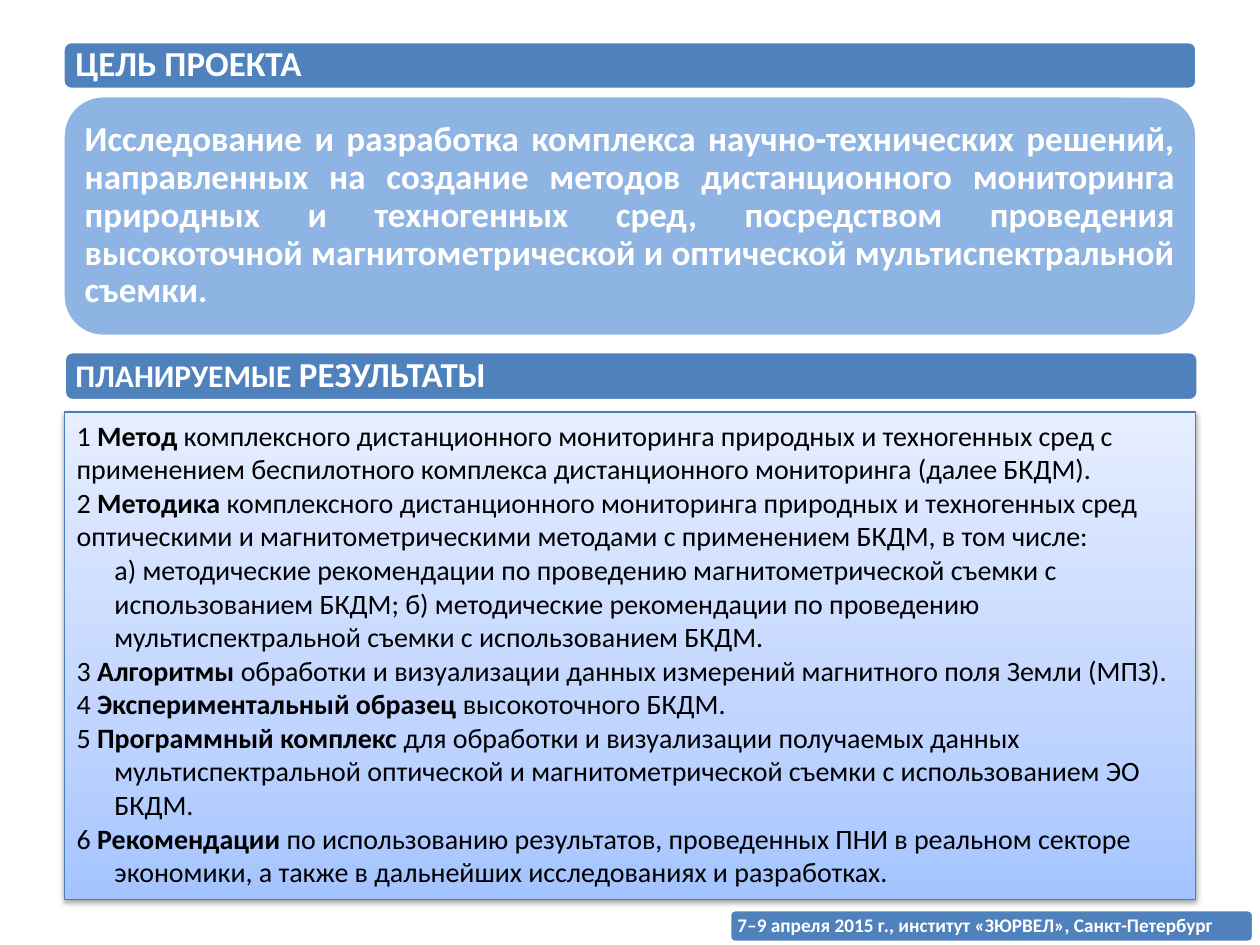
from copy import deepcopy
from dataclasses import dataclass

from lxml.etree import SubElement
from pptx import Presentation
from pptx.dml.color import RGBColor as Color
from pptx.enum.shapes import MSO_SHAPE as Preset
from pptx.enum.text import MSO_ANCHOR as Anchor, MSO_AUTO_SIZE as AutoSize, PP_ALIGN as Align
from pptx.oxml.ns import qn
from pptx.util import Inches, Pt


@dataclass(frozen=True)
class Theme:
    font: str = "Calibri"
    bar: str = "4F81BD"
    panel: str = "8EB4E3"
    light: str = "FFFFFF"
    dark: str = "000000"
    border: str = "4B7EBC"
    gradient: tuple = ((0, "A4C4FF"), (0.35, "BFD4FF"), (1, "E6EEFF"))
    heading: int = 20
    subheading: int = 18
    body: int = 16
    footer: int = 11


THEME = Theme()

GOAL = (
    "Исследование и разработка комплекса научно-технических решений, направленных "
    "на создание методов дистанционного мониторинга природных и техногенных сред, "
    "посредством проведения высокоточной магнитометрической и оптической "
    "мультиспектральной съемки."
)
FOOTER = "7–9 апреля 2015 г., институт «ЗЮРВЕЛ», Санкт-Петербург"

RESULTS = [
    ("1 ", "Метод", " комплексного дистанционного мониторинга природных и техногенных сред "
     "с применением беспилотного комплекса дистанционного мониторинга (далее БКДМ).", 0, 0),
    ("2 ", "Методика", " комплексного дистанционного мониторинга природных и техногенных сред "
     "оптическими и магнитометрическими методами с применением БКДМ, в том числе:", 0, 0),
    ("", "", "а) методические рекомендации по проведению магнитометрической съемки "
     "с использованием БКДМ; б) методические рекомендации по проведению "
     "мультиспектральной съемки с использованием БКДМ.", 0.3, 0),
    ("3 ", "Алгоритмы ", "обработки и визуализации данных измерений магнитного поля Земли (МПЗ).", 0, 0),
    ("4 ", "Экспериментальный образец ", "высокоточного БКДМ.", 0, 0),
    ("5 ", "Программный комплекс ", "для обработки и визуализации получаемых данных "
     "мультиспектральной оптической и магнитометрической съемки с использованием ЭО БКДМ.", 0.3, -0.3),
    ("6 ", "Рекомендации ", "по использованию результатов, проведенных ПНИ в реальном секторе "
     "экономики, а также в дальнейших исследованиях и разработках.", 0.3, -0.3),
]


def apply(target, values):
    for name, value in values.items():
        setattr(target, name, value)


def add_span(para, text, size, color, bold):
    span = para.add_run()
    span.text = text
    apply(span.font, {"name": THEME.font, "size": Pt(size), "bold": bold})
    span.font.color.rgb = Color.from_string(color)


def add_box(page, preset, place, line, width):
    box = page.shapes.add_shape(preset, *map(Inches, place))
    box.shadow.inherit = False
    box.line.color.rgb = Color.from_string(line)
    box.line.width = Pt(width)
    return box


def add_banner(page, place, spans, fill, inset, align=Align.LEFT):
    box = add_box(page, Preset.ROUNDED_RECTANGLE, place, THEME.light, 2)
    box.fill.solid()
    box.fill.fore_color.rgb = Color.from_string(fill)
    margins = {f"margin_{side}": Inches(inset) for side in ("left", "top", "right", "bottom")}
    apply(box.text_frame, {"word_wrap": True, "vertical_anchor": Anchor.MIDDLE, **margins})
    para = box.text_frame.paragraphs[0]
    apply(para, {"alignment": align, "line_spacing": 0.9})
    for text, size in spans:
        add_span(para, text, size, THEME.light, True)


def fill_gradient(box):
    box.fill.gradient()
    box.fill.gradient_angle = 90
    stop_list = box._element.spPr.find(qn("a:gradFill")).find(qn("a:gsLst"))
    stop_list.append(deepcopy(stop_list[-1]))
    for stop, (position, color) in zip(box.fill.gradient_stops, THEME.gradient):
        stop.color.rgb = Color.from_string(color)
        stop.position = position


def add_shadow(box):
    effects = box._element.spPr.find(qn("a:effectLst"))
    shadow = SubElement(effects, qn("a:outerShdw"), blurRad=str(Pt(3.1)), dist=str(Pt(1.6)),
                        dir="5400000", rotWithShape="0")
    color = SubElement(shadow, qn("a:srgbClr"), val=THEME.dark)
    SubElement(color, qn("a:alpha"), val="38000")


def add_results(page, place):
    box = add_box(page, Preset.RECTANGLE, place, THEME.border, 0.75)
    fill_gradient(box)
    add_shadow(box)
    frame = box.text_frame
    apply(frame, {"word_wrap": True, "vertical_anchor": Anchor.TOP,
                  "auto_size": AutoSize.SHAPE_TO_FIT_TEXT})
    for index, (number, term, detail, left, first) in enumerate(RESULTS):
        para = frame.add_paragraph() if index else frame.paragraphs[0]
        para.alignment = Align.LEFT
        if left:
            indents = para._p.get_or_add_pPr()
            indents.set("marL", str(Inches(left)))
            indents.set("indent", str(Inches(first)))
        for text, bold in ((number, False), (term, True), (detail, False)):
            if text:
                add_span(para, text, THEME.body, THEME.dark, bold)


def main():
    deck = Presentation()
    apply(deck, {"slide_width": Inches(10), "slide_height": Inches(7.5)})
    page = deck.slides.add_slide(deck.slide_layouts[6])
    add_banner(page, (0.5, 0.33, 9, 0.38), [("ЦЕЛЬ ПРОЕКТА", THEME.heading)], THEME.bar, 0.08)
    add_banner(page, (0.5, 0.76, 9, 1.91), [(GOAL, THEME.heading)], THEME.panel, 0.08, Align.JUSTIFY)
    add_banner(page, (0.51, 2.79, 9, 0.39),
               [("ПЛАНИРУЕМЫЕ ", THEME.subheading), ("РЕЗУЛЬТАТЫ", THEME.heading)], THEME.bar, 0.07)
    add_results(page, (0.51, 3.27, 8.98, 3.87))
    add_banner(page, (5.79, 7.22, 4.16, 0.26), [(FOOTER, THEME.footer)], THEME.bar, 0.05)
    deck.save("out.pptx")


if __name__ == "__main__":
    main()
